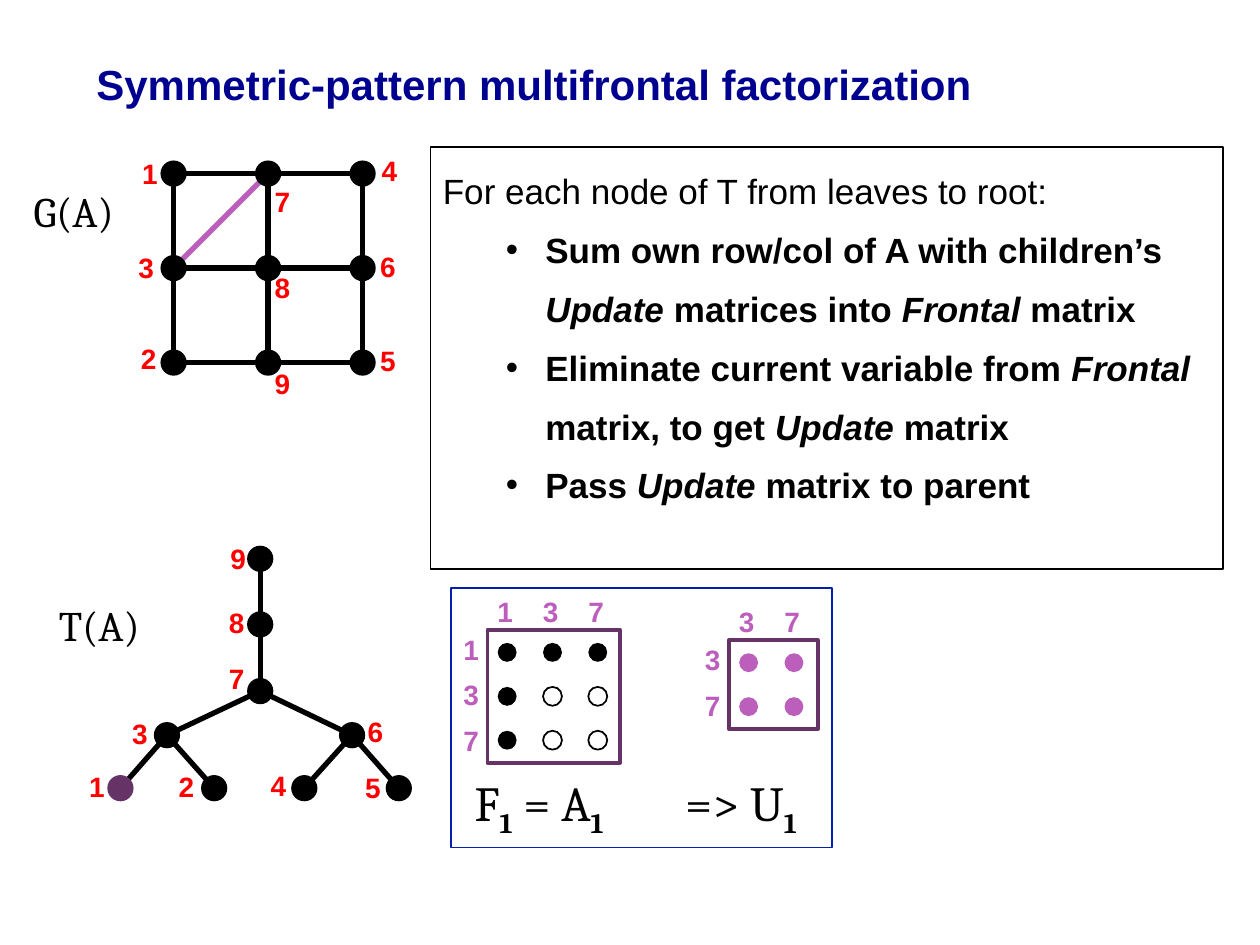
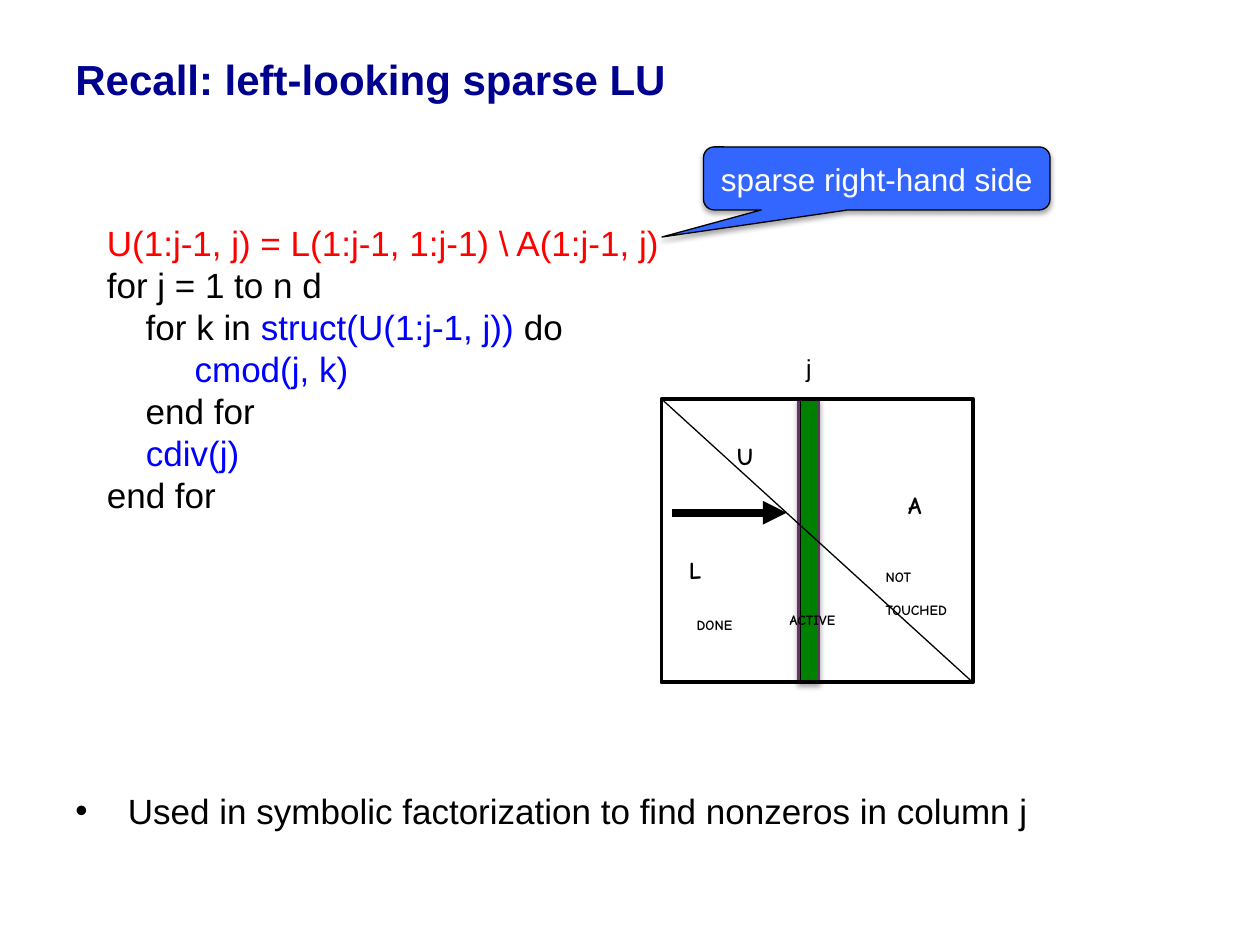
from lxml import etree
from pptx import Presentation
from pptx.dml.color import RGBColor
from pptx.enum.shapes import MSO_CONNECTOR, MSO_SHAPE
from pptx.enum.text import MSO_ANCHOR, PP_ALIGN
from pptx.oxml.ns import qn
from pptx.util import Pt

BLACK = RGBColor(0x00, 0x00, 0x00)
WHITE = RGBColor(0xFF, 0xFF, 0xFF)
NAVY = RGBColor(0x00, 0x00, 0x90)
RED = RGBColor(0xFF, 0x00, 0x00)
BLUE = RGBColor(0x00, 0x00, 0xFF)
ORCHID = RGBColor(0xBC, 0x5F, 0xBC)
PLUM = RGBColor(0x66, 0x33, 0x66)
PANEL_BLUE = RGBColor(0x02, 0x1F, 0xAE)
CALLOUT_BLUE = RGBColor(0x33, 0x66, 0xFF)
GREEN = RGBColor(0x00, 0x80, 0x00)

SANS, SERIF, COMIC = "Arial", "Cambria", "Comic Neue"
ITALIC, SUBSCRIPT = {"italic": True}, {"bold": True, "subscript": True}
IN_BLUE, IN_RED = {"color": BLUE}, {"color": RED}

# Slide 1: a paragraph is a list of (text, style) runs
STEPS_INTRO = [("For each node of T from leaves to root:", {})]
STEPS = [
    [("Sum own row/col of A with children’s ", {}), ("Update", ITALIC),
     (" matrices into ", {}), ("Frontal ", ITALIC), ("matrix", {})],
    [("Eliminate current variable from ", {}), ("Frontal", ITALIC),
     (" matrix, to get ", {}), ("Update", ITALIC), (" matrix", {})],
    [("Pass ", {}), ("Update", ITALIC), (" matrix to parent", {})],
]
FRONTAL_FORMULA = [("F", {}), ("1", SUBSCRIPT), (" = A", {}), ("1", SUBSCRIPT)]
UPDATE_FORMULA = [("=> U", {}), ("1", SUBSCRIPT)]

# Graph vertices: column, row, label left, label top
GRAPH = {
    "1": (0, 0, 74.2, 85.7), "7": (1, 0, 149.8, 102.2), "4": (2, 0, 211, 84.2),
    "3": (0, 1, 72, 139.7), "8": (1, 1, 149.8, 151.2), "6": (2, 1, 210.2, 139),
    "2": (0, 2, 73.4, 191.5), "9": (1, 2, 149.8, 205.9), "5": (2, 2, 210.2, 193),
}
GRAPH_ORIGIN, GRAPH_PITCH = 99.2, 54
FILL_EDGE = ("3", "7")

# Tree nodes: centre x, centre y, label left, label top, parent
TREE = {
    "9": (148.7, 319.3, 124.6, 306, None),
    "8": (148.7, 356.8, 123.8, 342.7, "9"),
    "7": (148.7, 394.9, 123.8, 374.4, "8"),
    "3": (95.4, 420.1, 68.4, 406.1, "7"),
    "6": (201.2, 420.1, 203, 404.6, "7"),
    "1": (68.8, 450.4, 43.9, 436.3, "3"),
    "2": (122.4, 450.4, 95, 436.3, "3"),
    "4": (173.9, 450.4, 147.6, 435.6, "6"),
    "5": (227.9, 450.4, 201.6, 437, "6"),
}
CURRENT_NODE = "1"

# Slide 2
ALGORITHM = [
    [(r"U(1:j-1, j) = L(1:j-1, 1:j-1) \ A(1:j-1, j)", IN_RED)],
    [("for j = 1 to n d", {})],
    [("    for k in ", {}), ("struct(U(1:j-1, j)) ", IN_BLUE), ("do", {})],
    [("         ", {}), ("cmod(j, k)", IN_BLUE)],
    [("    end for", {})],
    [("    ", {}), ("cdiv(j)", IN_BLUE)],
    [("end for", {})],
]
USAGE = [("Used in symbolic factorization to find nonzeros in column j", {})]
# Matrix regions: lines, left, top, width, height, size
REGIONS = [
    (["DONE"], 391, 339.1, 43.2, 18.7, 14),
    (["NOT", "TOUCHED"], 499, 311.8, 65.5, 31.7, 14),
    (["ACTIVE"], 444.2, 336.2, 51.1, 18.7, 14),
    (["U"], 414, 232.6, 25.2, 28.1, 24),
    (["L"], 386.6, 297.4, 23, 28.1, 24),
    (["A"], 511.9, 260.6, 25.2, 28.1, 24),
]


def write(paragraph, runs, size, font=SANS, color=BLACK, bold=False):
    for text, style in runs:
        run = paragraph.add_run()
        run.text = text
        run.font.name = font
        run.font.size = Pt(size)
        run.font.bold = style.get("bold", bold)
        run.font.italic = style.get("italic", False)
        run.font.color.rgb = style.get("color", color)
        if style.get("subscript"):
            run._r.get_or_add_rPr().set("baseline", "-25000")


def add_text(slide, box, paragraphs, size, wrap=False, anchor=MSO_ANCHOR.TOP, **style):
    frame = slide.shapes.add_textbox(*map(Pt, box)).text_frame
    frame.word_wrap = wrap
    frame.vertical_anchor = anchor
    for i, runs in enumerate(paragraphs):
        paragraph = frame.paragraphs[0] if i == 0 else frame.add_paragraph()
        write(paragraph, runs, size, **style)
    return frame


def add_title(slide, text, box):
    add_text(slide, box, [[(text, {})]], 24, wrap=True,
             anchor=MSO_ANCHOR.MIDDLE, color=NAVY, bold=True)


def add_number(slide, number, left, top, color=RED):
    add_text(slide, (left, top, 23.3, 26.6), [[(number, {})]], 16, color=color, bold=True)


def set_bullet(paragraph, margin, hanging):
    properties = paragraph._p.get_or_add_pPr()
    properties.set("marL", str(Pt(margin)))
    properties.set("indent", str(-Pt(hanging)))
    etree.SubElement(properties, qn("a:buFont"), typeface=SANS)
    etree.SubElement(properties, qn("a:buChar"), char="•")


def add_figure(slide, kind, box, fill=None, line=None, width=1):
    figure = slide.shapes.add_shape(kind, *map(Pt, box))
    figure.shadow.inherit = False
    if fill is None:
        figure.fill.background()
    else:
        figure.fill.solid()
        figure.fill.fore_color.rgb = fill
    if line is None:
        figure.line.fill.background()
    else:
        figure.line.color.rgb = line
        figure.line.width = Pt(width)
    return figure


def add_dot(slide, center, diameter, **look):
    x, y = center
    corner = (x - diameter / 2, y - diameter / 2)
    add_figure(slide, MSO_SHAPE.OVAL, (*corner, diameter, diameter), **look)


def add_line(slide, start, end, width=3, color=BLACK):
    line = slide.shapes.add_connector(MSO_CONNECTOR.STRAIGHT, *map(Pt, (*start, *end)))
    line.line.color.rgb = color
    line.line.width = Pt(width)
    etree.SubElement(line._element.spPr, qn("a:effectLst"))
    return line


def drop_shadow(figure):
    """Fill the empty effect list with a soft shadow straight below."""
    effects = figure._element.spPr.find(qn("a:effectLst"))
    shadow = etree.SubElement(effects, qn("a:outerShdw"), blurRad=str(Pt(3.1)),
                              dist=str(Pt(1.8)), dir="5400000", rotWithShape="0")
    tint = etree.SubElement(shadow, qn("a:srgbClr"), val=str(BLACK))
    etree.SubElement(tint, qn("a:alpha"), val="35000")


def draw_graph(slide):
    centers = {name: (GRAPH_ORIGIN + GRAPH_PITCH * column, GRAPH_ORIGIN + GRAPH_PITCH * row)
               for name, (column, row, *_) in GRAPH.items()}
    add_line(slide, *(centers[name] for name in FILL_EDGE), color=ORCHID)
    first, last = GRAPH_ORIGIN, GRAPH_ORIGIN + 2 * GRAPH_PITCH
    for i in range(3):
        middle = GRAPH_ORIGIN + i * GRAPH_PITCH
        add_line(slide, (middle, first), (middle, last))
        add_line(slide, (first, middle), (last, middle))
    for name, (_, _, left, top) in GRAPH.items():
        add_dot(slide, centers[name], 15, fill=BLACK)
        add_number(slide, name, left, top)
    add_text(slide, (12.2, 102.2, 65.5, 36.7), [[("G(A)", {})]], 24, font=SERIF)


def draw_tree(slide):
    for x, y, _, _, parent in TREE.values():
        if parent:
            add_line(slide, (x, y), TREE[parent][:2])
    for name, (x, y, left, top, _) in TREE.items():
        add_dot(slide, (x, y), 15, fill=PLUM if name == CURRENT_NODE else BLACK)
        add_number(slide, name, left, top)
    add_text(slide, (26.6, 339.1, 63.4, 36.7), [[("T(A)", {})]], 24, font=SERIF)


def draw_matrix(slide, indices, left, top, look_of):
    """look_of(row, column) gives the fill or line of each entry."""
    side = 25 * len(indices) + 0.8
    for i, index in enumerate(indices):
        add_number(slide, index, left - 1.4 + 26 * i, top - 23.8, ORCHID)
        add_number(slide, index, left - 20.9, top - 2.2 + 26 * i, ORCHID)
        for j in range(len(indices)):
            center = (left + 11.2 + 25.9 * j, top + 12.8 + 25.1 * i)
            add_dot(slide, center, 10.8, **look_of(i, j))
    add_figure(slide, MSO_SHAPE.RECTANGLE, (left, top, side, side), line=PLUM, width=2.25)


def build_multifrontal(slide):
    add_title(slide, "Symmetric-pattern multifrontal factorization", (48, 24, 630, 48))
    draw_tree(slide)

    draw_matrix(slide, "137", 278.6, 360,
                lambda row, column: {"line": BLACK} if row and column else {"fill": BLACK})
    draw_matrix(slide, "37", 416.6, 365.9, lambda row, column: {"fill": ORCHID})
    add_text(slide, (264.2, 437.8, 99.4, 41), [FRONTAL_FORMULA], 28, font=SERIF)
    add_text(slide, (384.5, 437.8, 83.5, 41), [UPDATE_FORMULA], 28, font=SERIF)
    add_figure(slide, MSO_SHAPE.RECTANGLE, (257.8, 336, 217.6, 148.4), line=PANEL_BLUE)

    steps_box = (246, 84, 453, 241.2)
    add_figure(slide, MSO_SHAPE.RECTANGLE, steps_box, line=BLACK)
    frame = add_text(slide, steps_box, [STEPS_INTRO], 20, wrap=True)
    for step in STEPS:
        paragraph = frame.add_paragraph()
        set_bullet(paragraph, 58.5, 22.5)
        write(paragraph, step, 20, bold=True)
    for paragraph in frame.paragraphs:
        paragraph.line_spacing = 1.4

    draw_graph(slide)


def draw_column_step(slide):
    left, top, width, height = 378, 228, 178, 162
    bottom = top + height
    column = add_figure(slide, MSO_SHAPE.RECTANGLE, (456, top, 12, height),
                        fill=GREEN, line=PLUM, width=0.75)
    drop_shadow(column)
    add_figure(slide, MSO_SHAPE.RECTANGLE, (left, top, width, height), line=BLACK, width=2.25)
    add_line(slide, (457.5, top), (457.5, bottom), 0.75)
    arrow = add_line(slide, (384, 293), (449.5, 293), 4.5)
    etree.SubElement(arrow.line._get_or_add_ln(), qn("a:tailEnd"), type="triangle")
    add_line(slide, (left, top), (left + width, bottom), 0.75)
    for lines, *box, size in REGIONS:
        add_text(slide, box, [[(line, {"bold": True, "subscript": True})] for line in lines],
                 size, font=COMIC)
    add_text(slide, (453.5, 198, 17.5, 24.5), [[("j", {})]], 14)


def build_left_looking(slide):
    add_title(slide, "Recall: left-looking sparse LU", (36, 18, 588, 54))
    usage = add_text(slide, (36, 438, 642, 45), [], 20, wrap=True).paragraphs[0]
    set_bullet(usage, 30, 30)
    usage.line_spacing = 1.4
    write(usage, USAGE, 20)

    add_text(slide, (54, 123, 360, 177), ALGORITHM, 20, wrap=True)
    draw_column_step(slide)

    callout = add_figure(slide, MSO_SHAPE.ROUNDED_RECTANGULAR_CALLOUT, (402, 84, 198, 36),
                         fill=CALLOUT_BLUE, line=BLACK, width=0.75)
    for i, value in enumerate((-0.62, 0.93, 0.17)):
        callout.adjustments[i] = value
    drop_shadow(callout)
    callout.text_frame.vertical_anchor = MSO_ANCHOR.MIDDLE
    label = callout.text_frame.paragraphs[0]
    label.alignment = PP_ALIGN.CENTER
    write(label, [("sparse right-hand side", {})], 18, color=WHITE)


def main():
    deck = Presentation()
    deck.slide_width, deck.slide_height = Pt(720), Pt(540)
    for build in (build_multifrontal, build_left_looking):
        build(deck.slides.add_slide(deck.slide_layouts[6]))
    deck.save("out.pptx")


if __name__ == "__main__":
    main()
